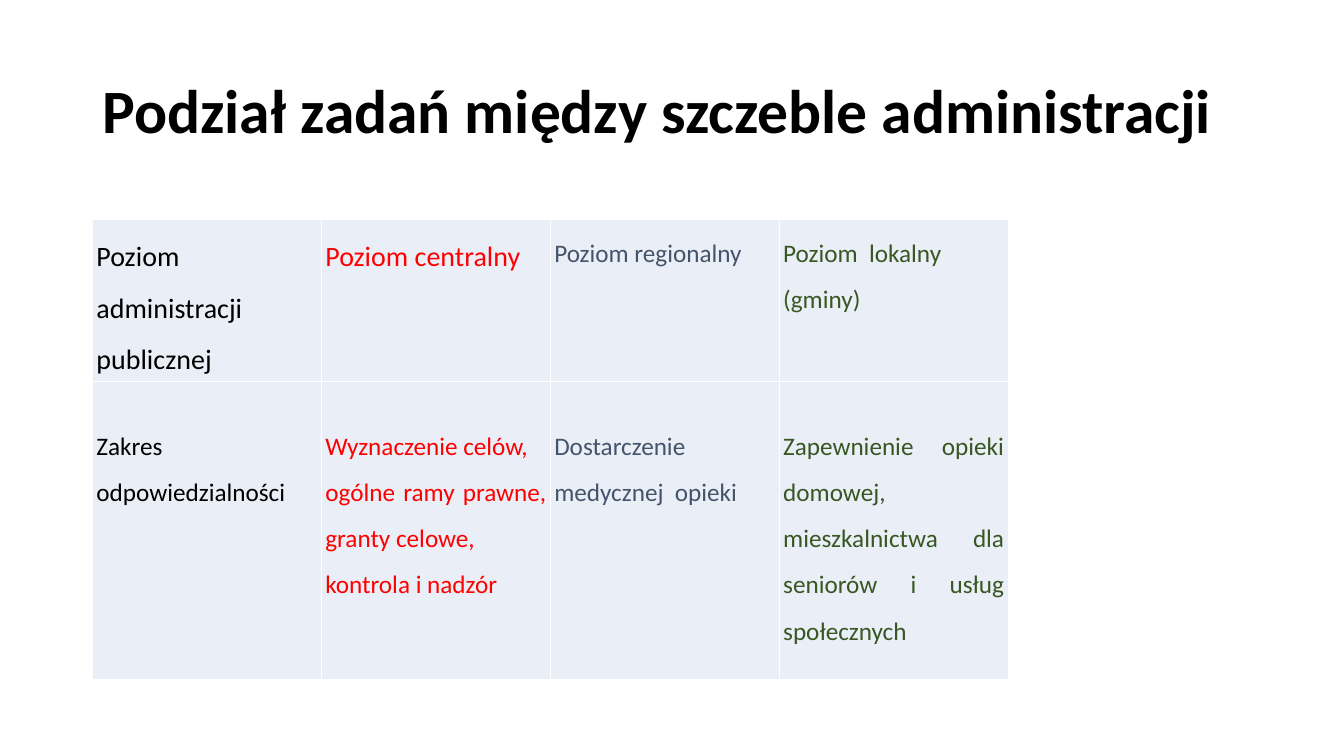
from lxml import etree
from pptx import Presentation
from pptx.dml.color import RGBColor
from pptx.enum.text import MSO_ANCHOR, PP_ALIGN
from pptx.oxml.ns import qn
from pptx.util import Cm, Pt

LEFT, JUSTIFY = PP_ALIGN.LEFT, PP_ALIGN.JUSTIFY
TOP, MIDDLE = MSO_ANCHOR.TOP, MSO_ANCHOR.MIDDLE
TITLE_ONLY = 5
FONT = "Calibri"
COLOURS = {
    "text": "000000",
    "central": "FF0000",
    "regional": "44546A",
    "local": "385723",
    "cell": "EAEFF7",
    "border": "FFFFFF",
}
COLUMN_WIDTH = 5.77
ROW_HEIGHTS = (3.94, 7.52)
TOP_MARGINS = (0.1, 0.88)
COLUMN_COLOURS = ("text", "central", "regional", "local")
# Each cell: text size, then its paragraphs
LEVELS = [
    (20, ["Poziom administracji publicznej"]),
    (20, ["Poziom centralny"]),
    (18, ["Poziom regionalny"]),
    (18, ["Poziom  lokalny", "(gminy)"]),
]
DUTIES = [
    (18, ["Zakres odpowiedzialności"]),
    (18, ["Wyznaczenie celów,", "ogólne ramy prawne, granty celowe,",
          "kontrola i nadzór"]),
    (18, ["Dostarczenie medycznej  opieki"]),
    (18, ["Zapewnienie opieki domowej, mieszkalnictwa dla seniorów "
          "i usług społecznych"]),
]


def rgb(name):
    return RGBColor.from_string(COLOURS[name])


def add_paragraphs(frame, texts, size, colour, align, spacing, bold=False):
    for index, text in enumerate(texts):
        paragraph = frame.add_paragraph() if index else frame.paragraphs[0]
        paragraph.alignment = align
        paragraph.line_spacing = spacing
        run = paragraph.add_run()
        run.text = text
        run.font.name = FONT
        run.font.size = Pt(size)
        run.font.bold = bold
        run.font.color.rgb = rgb(colour)


def add_borders(cell):
    """Draw all four cell edges; they must precede the fill in tcPr."""
    properties = cell._tc.get_or_add_tcPr()
    for position, edge in enumerate(("lnL", "lnR", "lnT", "lnB")):
        line = etree.Element(qn(f"a:{edge}"), w=str(Pt(1)))
        fill = etree.SubElement(line, qn("a:solidFill"))
        etree.SubElement(fill, qn("a:srgbClr"), val=COLOURS["border"])
        properties.insert(position, line)


def fill_cell(cell, size, texts, colour, top_margin):
    cell.fill.solid()
    cell.fill.fore_color.rgb = rgb("cell")
    cell.margin_left = cell.margin_right = cell.margin_bottom = Cm(0.1)
    cell.margin_top = Cm(top_margin)
    cell.vertical_anchor = TOP
    add_paragraphs(cell.text_frame, texts, size, colour, JUSTIFY, 1.5)
    add_borders(cell)


def set_title(slide, text):
    title = slide.shapes.title
    title.left, title.top = Cm(2.33), Cm(1.01)
    title.width, title.height = Cm(29.21), Cm(3.68)
    title.text_frame.vertical_anchor = MIDDLE
    add_paragraphs(title.text_frame, [text], 44, "text", LEFT, 0.9, bold=True)


def add_task_table(slide, rows):
    columns = len(COLUMN_COLOURS)
    table = slide.shapes.add_table(
        len(rows), columns, Cm(2.33), Cm(5.52),
        Cm(COLUMN_WIDTH * columns), Cm(sum(ROW_HEIGHTS))).table
    for column in table.columns:
        column.width = Cm(COLUMN_WIDTH)
    for r, contents in enumerate(rows):
        table.rows[r].height = Cm(ROW_HEIGHTS[r])
        for c, (size, texts) in enumerate(contents):
            fill_cell(table.cell(r, c), size, texts, COLUMN_COLOURS[c],
                      TOP_MARGINS[r])


def main():
    presentation = Presentation()
    presentation.slide_width, presentation.slide_height = Cm(33.87), Cm(19.05)
    slide = presentation.slides.add_slide(presentation.slide_layouts[TITLE_ONLY])
    set_title(slide, "Podział zadań między szczeble administracji")
    add_task_table(slide, [LEVELS, DUTIES])
    presentation.save("out.pptx")


if __name__ == "__main__":
    main()
